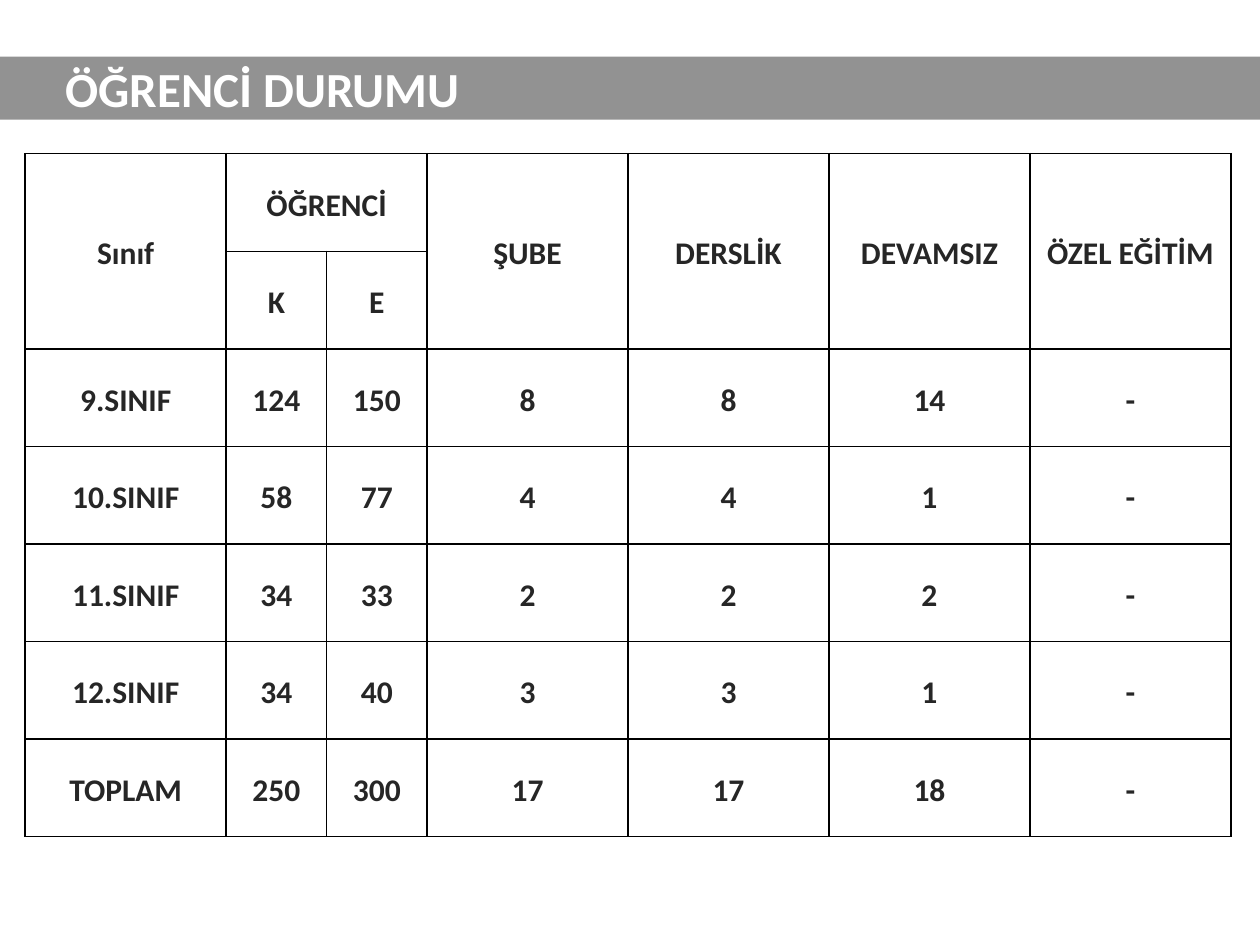
import pptx
import pptx.dml.color
import pptx.enum.shapes
import pptx.enum.text
import pptx.oxml
import pptx.oxml.ns
import pptx.util

Inches = pptx.util.Inches
Pt = pptx.util.Pt
ALIGN = pptx.enum.text.PP_ALIGN
MIDDLE = pptx.enum.text.MSO_ANCHOR.MIDDLE

COLORS = {"band": "929292", "white": "FFFFFF", "text": "262626", "border": "000000"}

HEADERS = ["Sınıf", "ÖĞRENCİ", "", "ŞUBE", "DERSLİK", "DEVAMSIZ", "ÖZEL EĞİTİM"]
SUBHEADERS = ["", "K", "E", "", "", "", ""]
CLASS_ROWS = [
    ["9.SINIF", "124", "150", "8", "8", "14", "-"],
    ["10.SINIF", "58", "77", "4", "4", "1", "-"],
    ["11.SINIF", "34", "33", "2", "2", "2", "-"],
    ["12.SINIF", "34", "40", "3", "3", "1", "-"],
    ["TOPLAM", "250", "300", "17", "17", "18", "-"],
]
COLUMN_UNITS = [2, 1, 1, 2, 2, 2, 2]
# Each merge is (first row, first column, last row, last column).
MERGES = [(0, 1, 0, 2)] + [(0, column, 1, column) for column in (0, 3, 4, 5, 6)]


def set_attributes(target, values):
    for name, value in values.items():
        setattr(target, name, value)


def rgb(name):
    return pptx.dml.color.RGBColor.from_string(COLORS[name])


class SlideBuilder:
    """Holds the text styles and the slide being built."""

    styles = {
        "title": ({"name": "Calibri", "size": Pt(28), "bold": True}, "white",
                  {"alignment": ALIGN.LEFT}),
        "cell": ({"name": "Calibri", "size": Pt(18), "bold": True}, "text",
                 {"alignment": ALIGN.CENTER, "line_spacing": 1.15}),
    }

    def __init__(self, slide):
        self.slide = slide

    def add_text(self, text_frame, text, style):
        font_values, color, paragraph_values = self.styles[style]
        paragraph = text_frame.paragraphs[0]
        set_attributes(paragraph, paragraph_values)
        run = paragraph.add_run()
        run.text = text
        set_attributes(run.font, font_values)
        run.font.color.rgb = rgb(color)

    def add_title_band(self, text, left, top, width, height):
        shape = self.slide.shapes.add_shape(
            pptx.enum.shapes.MSO_SHAPE.RECTANGLE,
            Inches(left), Inches(top), Inches(width), Inches(height))
        shape.shadow.inherit = False
        shape.fill.solid()
        shape.fill.fore_color.rgb = rgb("band")
        shape.line.fill.background()
        set_attributes(shape.text_frame, {
            "word_wrap": True, "vertical_anchor": MIDDLE, "margin_left": Inches(0.52),
            "margin_top": 0, "margin_bottom": 0})
        self.add_text(shape.text_frame, text, "title")

    def add_border(self, cell):
        properties = cell._tc.get_or_add_tcPr()
        # Borders must come before the fill in the cell properties.
        for position, side in enumerate(("lnL", "lnR", "lnT", "lnB")):
            properties.insert(position, pptx.oxml.parse_xml(
                f'<a:{side} {pptx.oxml.ns.nsdecls("a")} w="{Pt(1)}"><a:solidFill>'
                f'<a:srgbClr val="{COLORS["border"]}"/></a:solidFill></a:{side}>'))

    def add_table(self, rows, column_units, merges, left, top, width, height):
        table = self.slide.shapes.add_table(
            len(rows), len(column_units),
            Inches(left), Inches(top), Inches(width), Inches(height)).table
        set_attributes(table, {"first_row": False, "horz_banding": False})
        for column, units in zip(table.columns, column_units):
            column.width = Inches(width * units / sum(column_units))
        for row in table.rows:
            row.height = Inches(height / len(rows))
        for first_row, first_column, last_row, last_column in merges:
            table.cell(first_row, first_column).merge(table.cell(last_row, last_column))
        for row_index, texts in enumerate(rows):
            for column_index, text in enumerate(texts):
                cell = table.cell(row_index, column_index)
                set_attributes(cell, {
                    "vertical_anchor": MIDDLE, "margin_left": Inches(0.07),
                    "margin_right": Inches(0.07), "margin_top": 0, "margin_bottom": 0})
                cell.fill.solid()
                cell.fill.fore_color.rgb = rgb("white")
                self.add_border(cell)
                if text:
                    self.add_text(cell.text_frame, text, "cell")


def main():
    presentation = pptx.Presentation()
    set_attributes(presentation, {"slide_width": Inches(10), "slide_height": Inches(7.5)})
    builder = SlideBuilder(presentation.slides.add_slide(presentation.slide_layouts[6]))
    builder.add_title_band("ÖĞRENCİ DURUMU", 0, 0.45, 10, 0.5)
    builder.add_table([HEADERS, SUBHEADERS] + CLASS_ROWS, COLUMN_UNITS, MERGES,
                      0.2, 1.22, 9.57, 5.42)
    presentation.save("out.pptx")


if __name__ == "__main__":
    main()
